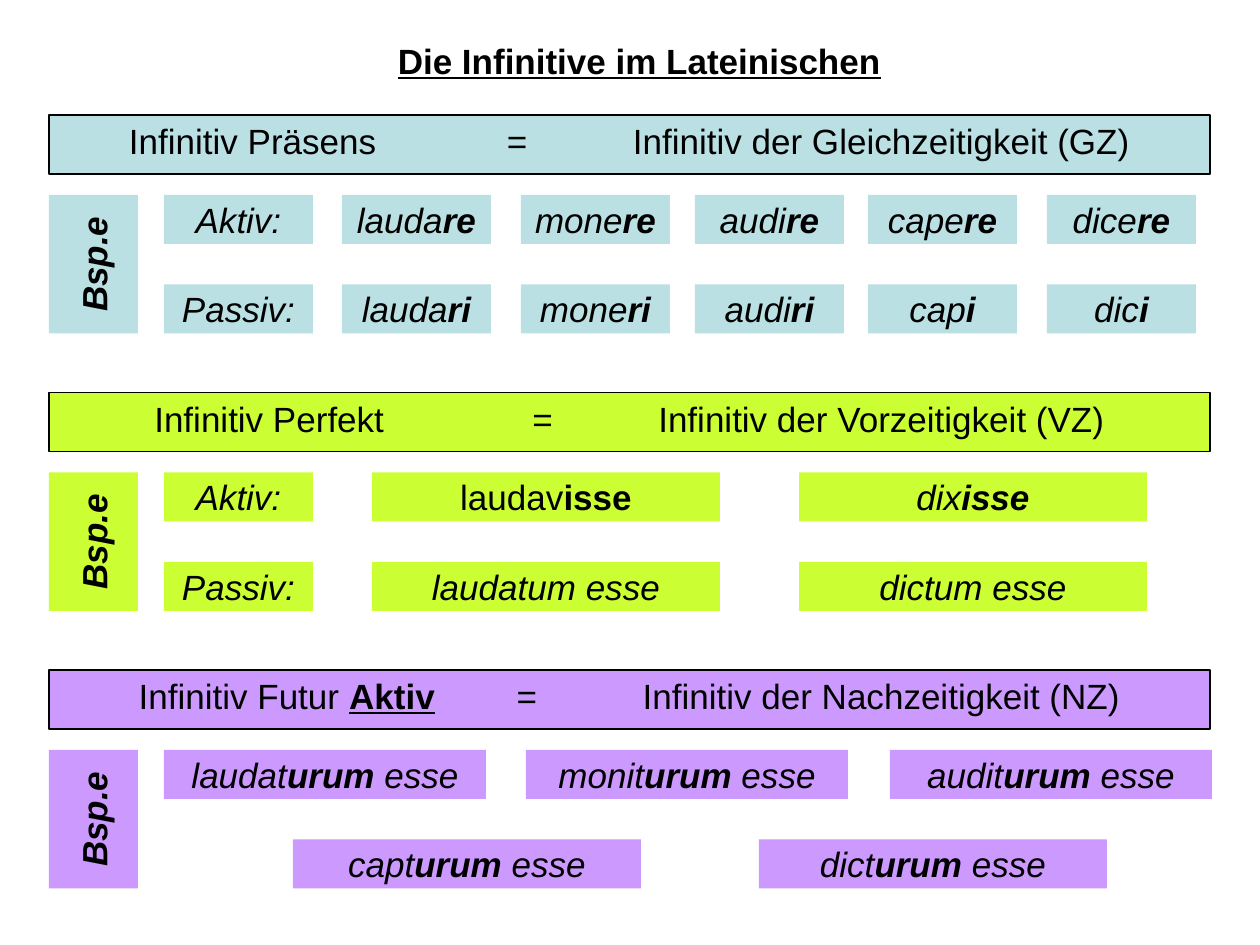
from lxml import etree
from pptx import Presentation, util as u
from pptx.dml.color import RGBColor
from pptx.enum import shapes, text
from pptx.oxml.ns import qn

PX = 914400 // 126
COLORS = {"text": "000000", "present": "BBE0E3", "perfect": "CCFF33", "future": "CC99FF"}

# Content: *...* marks bold text; each cell group is (row, width, lefts, words)
TITLE = "Die Infinitive im Lateinischen"
EXAMPLES = "Bsp.e"
COLUMNS = [342, 521, 695, 868, 1047]
VOICES = [(0, 149, [164], ["Aktiv:"]), (1, 149, [164], ["Passiv:"])]
SECTIONS = [
    ("present", "Infinitiv Präsens\t\t=\tInfinitiv der Gleichzeitigkeit (GZ)", VOICES + [
        (0, 149, COLUMNS, ["lauda*re*", "mone*re*", "audi*re*", "cape*re*", "dice*re*"]),
        (1, 149, COLUMNS, ["lauda*ri*", "mone*ri*", "audi*ri*", "cap*i*", "dic*i*"]),
    ]),
    ("perfect", "Infinitiv Perfekt\t\t=\tInfinitiv der Vorzeitigkeit (VZ)", VOICES + [
        (0, 348, [372, 799], ["laudav*isse*", "dix*isse*"]),
        (1, 348, [372, 799], ["laudatum esse", "dictum esse"]),
    ]),
    ("future", "Infinitiv Futur *Aktiv*\t=\tInfinitiv der Nachzeitigkeit (NZ)", [
        (0, 322, [164, 526, 890], ["laudat*urum* esse", "monit*urum* esse", "audit*urum* esse"]),
        (1, 348, [293, 759], ["capt*urum* esse", "dict*urum* esse"]),
    ]),
]
UPRIGHT = {"laudav*isse*"}

# Layout in px
SECTION_TOP, SECTION_STEP = 115, 277.5
ROW_TOP, ROW_STEP, ROW_H = 80, 89.5, 49
LEFT, HEADER_W, HEADER_H, LABEL_W = 49, 1161, 59, 89
TAB_STOPS = [252, 378, 504]


def rgb(name):
    return RGBColor.from_string(COLORS[name])


def px(*values):
    return [round(v * PX) for v in values]


def write(sp, words, italic=False, underline_all=False, underline_bold=False,
          spacing=None, tabs=(), vert=None):
    tf = sp.text_frame
    tf.word_wrap = True
    tf.vertical_anchor = text.MSO_ANCHOR.MIDDLE
    if vert:
        tf._txBody.bodyPr.set("vert", vert)
    p = tf.paragraphs[0]
    p.alignment = text.PP_ALIGN.CENTER
    if spacing:
        p.line_spacing = spacing
    if tabs:
        tab_list = etree.SubElement(p._p.get_or_add_pPr(), qn("a:tabLst"))
        for pos in px(*tabs):
            etree.SubElement(tab_list, qn("a:tab"), pos=str(pos), algn="l")
    for i, part in enumerate(words.split("*")):
        if not part:
            continue
        bold = i % 2 == 1
        r = p.add_run()
        r.text = part
        r.font.name, r.font.size = "Arial", u.Pt(20)
        r.font.color.rgb = rgb("text")
        r.font.bold, r.font.italic = bold, italic
        r.font.underline = underline_all or (underline_bold and bold)


def add_box(s, box, color, words, outlined=False, **fmt):
    sp = s.shapes.add_shape(shapes.MSO_SHAPE.RECTANGLE, *px(*box))
    sp.shadow.inherit = False
    sp.fill.solid()
    sp.fill.fore_color.rgb = rgb(color)
    if outlined:
        sp.line.color.rgb = rgb("text")
        sp.line.width = u.Pt(0.75)
    else:
        sp.line.fill.background()
    write(sp, words, **fmt)


def main():
    prs = Presentation()
    prs.slide_width, prs.slide_height = px(1260, 945)
    s = prs.slides.add_slide(prs.slide_layouts[6])

    # Title
    title = s.shapes.add_textbox(*px(104, 26, 1071, 69))
    write(title, f"*{TITLE}*", underline_all=True)

    for n, (color, heading, groups) in enumerate(SECTIONS):
        top = SECTION_TOP + n * SECTION_STEP
        rows_top = top + ROW_TOP
        # Heading bar and vertical label
        add_box(s, (LEFT, top, HEADER_W, HEADER_H), color, heading, outlined=True,
                underline_bold=True, spacing=0.8, tabs=TAB_STOPS)
        add_box(s, (LEFT, rows_top, LABEL_W, ROW_STEP + ROW_H), color, f"*{EXAMPLES}*",
                italic=True, vert="vert270")
        # Example cells
        for row, width, lefts, words in groups:
            for left, word in zip(lefts, words):
                add_box(s, (left, rows_top + row * ROW_STEP, width, ROW_H), color, word,
                        italic=word not in UPRIGHT)

    prs.save("out.pptx")


if __name__ == "__main__":
    main()
